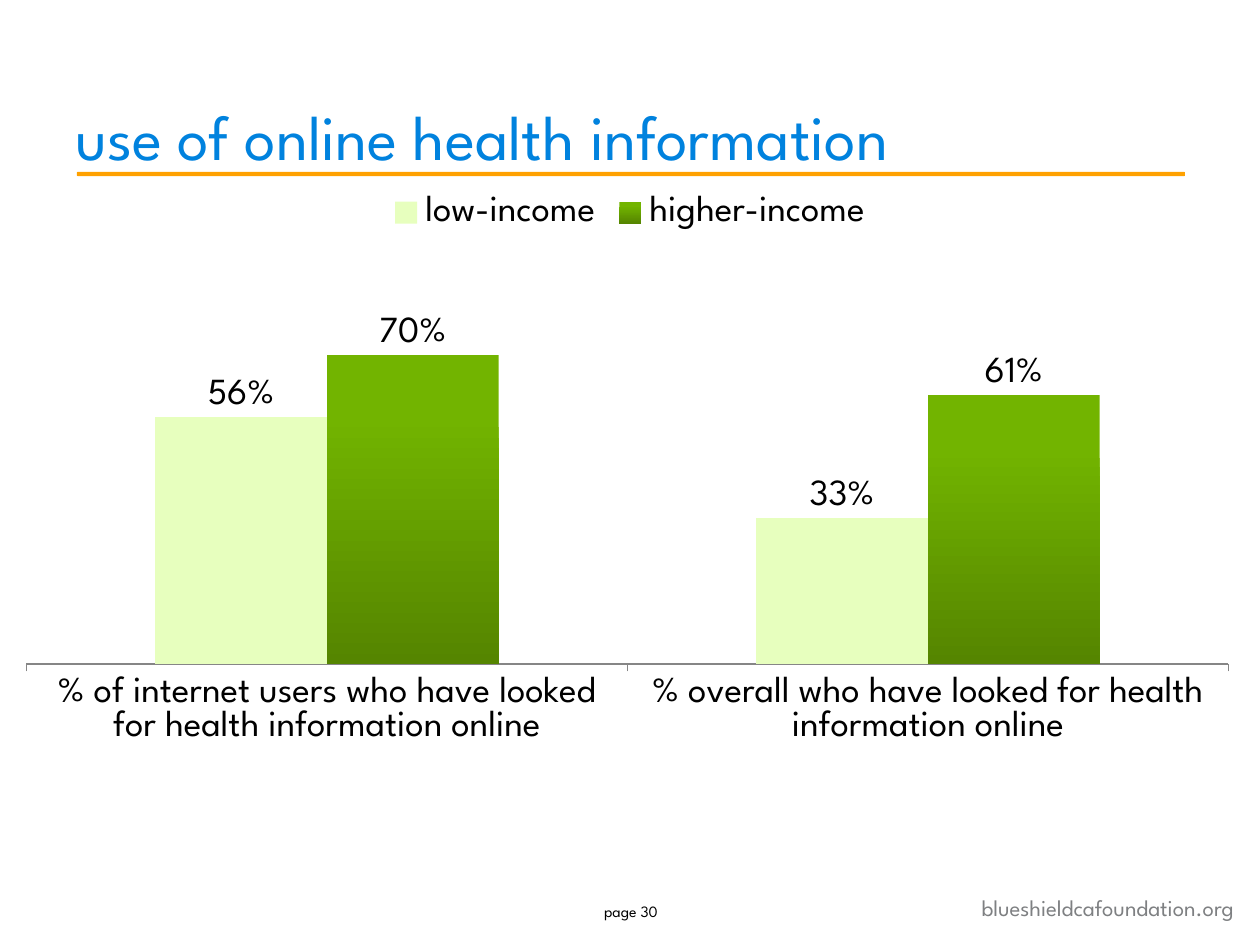
from lxml import etree
from pptx import Presentation
from pptx.chart.data import CategoryChartData
from pptx.dml.color import RGBColor
from pptx.enum.chart import XL_CHART_TYPE, XL_LABEL_POSITION, XL_LEGEND_POSITION, XL_TICK_MARK
from pptx.enum.shapes import MSO_SHAPE
from pptx.enum.text import MSO_ANCHOR, PP_ALIGN
from pptx.util import Pt

COLUMNS = XL_CHART_TYPE.COLUMN_CLUSTERED
ABOVE_BAR = XL_LABEL_POSITION.OUTSIDE_END
LEGEND_TOP = XL_LEGEND_POSITION.TOP
TICK_OUT, TICK_NONE = XL_TICK_MARK.OUTSIDE, XL_TICK_MARK.NONE
TOP, MIDDLE, BOTTOM = MSO_ANCHOR.TOP, MSO_ANCHOR.MIDDLE, MSO_ANCHOR.BOTTOM
LEFT, CENTER, RIGHT = PP_ALIGN.LEFT, PP_ALIGN.CENTER, PP_ALIGN.RIGHT
FONT = "League Spartan"
PX = 914400 / 126


def px(*lengths):
    return [round(length * PX) for length in lengths]


def style(font, size, color):
    font.name = FONT
    font.size = Pt(size)
    font.bold = False
    font.color.rgb = RGBColor.from_string(color)


prs = Presentation()
prs.slide_width, prs.slide_height = px(1260, 945)
slide = prs.slides.add_slide(prs.slide_layouts[6])

title_rule = slide.shapes.add_shape(MSO_SHAPE.ROUNDED_RECTANGLE, *px(77, 172, 1108, 4))
title_rule.shadow.inherit = False
title_rule.fill.solid()
title_rule.fill.fore_color.rgb = RGBColor.from_string("FFA100")
title_rule.line.fill.background()

texts = [
    ("blueshieldcafoundation.org", (907, 888, 339, 40), 13, "7E8082", RIGHT, TOP, None),
    ("use of online health information", (63, 32, 1134, 147), 36, "0082DE", LEFT, BOTTOM, 42),
    ("page 30", (575, 878, 112, 66), 9, "000000", CENTER, MIDDLE, None),
]
for words, place, size, color, align, anchor, spacing in texts:
    frame = slide.shapes.add_textbox(*px(*place)).text_frame
    frame.word_wrap = True
    frame.vertical_anchor = anchor
    line = frame.paragraphs[0]
    line.text = words
    line.alignment = align
    if spacing:
        line.line_spacing = Pt(spacing)
    style(line.runs[0].font, size, color)

usage = CategoryChartData(number_format="0%")
usage.categories = [
    "% of internet users who have looked for health information online",
    "% overall who have looked for health information online",
]
usage.add_series("low-income", (0.56, 0.33))
usage.add_series("higher-income", (0.7, 0.61))
chart = slide.shapes.add_chart(COLUMNS, *px(0, 179, 1260, 672), usage).chart
chart.has_title = False
style(chart.font, 18, "000000")

chart.has_legend = True
chart.legend.position = LEGEND_TOP
chart.legend.include_in_layout = False
style(chart.legend.font, 21, "000000")

groups = chart.category_axis
groups.major_tick_mark = TICK_OUT
groups.format.line.color.rgb = RGBColor.from_string("868686")
style(groups.tick_labels.font, 21, "000000")
share = chart.value_axis
share.minimum_scale, share.maximum_scale = 0, 1
share.has_major_gridlines = False
share.major_tick_mark = TICK_NONE
share.visible = False

plot = chart.plots[0]
plot.gap_width = 150
plot.overlap = 0
plot.vary_by_categories = False
low_income, higher_income = plot.series
for income in plot.series:
    income.invert_if_negative = False
    labels = income.data_labels
    labels.show_value = True
    labels.number_format = "0%"
    labels.number_format_is_linked = False
    labels.position = ABOVE_BAR
    style(labels.font, 21, "000000")

low_income.format.fill.solid()
low_income.format.fill.fore_color.rgb = RGBColor.from_string("E7FFBE")
shading = higher_income.format.fill
shading.gradient()
shading.gradient_angle = 270
for stop, position, color in zip(shading.gradient_stops, (0.2, 1), ("72B400", "558500")):
    stop.position = position
    stop.color.rgb = RGBColor.from_string(color)

plot_area = chart._chartSpace.chart.plotArea
namespace = etree.QName(plot_area).namespace
for layout in plot_area.findall(f"{{{namespace}}}layout"):
    plot_area.remove(layout)
layout = etree.Element(f"{{{namespace}}}layout")
manual = etree.SubElement(layout, f"{{{namespace}}}manualLayout")
for tag, value in [
    ("layoutTarget", "inner"), ("xMode", "edge"), ("yMode", "edge"),
    ("x", "0.021"), ("y", "0.066"), ("w", "0.954"), ("h", "0.656"),
]:
    etree.SubElement(manual, f"{{{namespace}}}{tag}").set("val", value)
plot_area.insert(0, layout)

prs.save("out.pptx")
